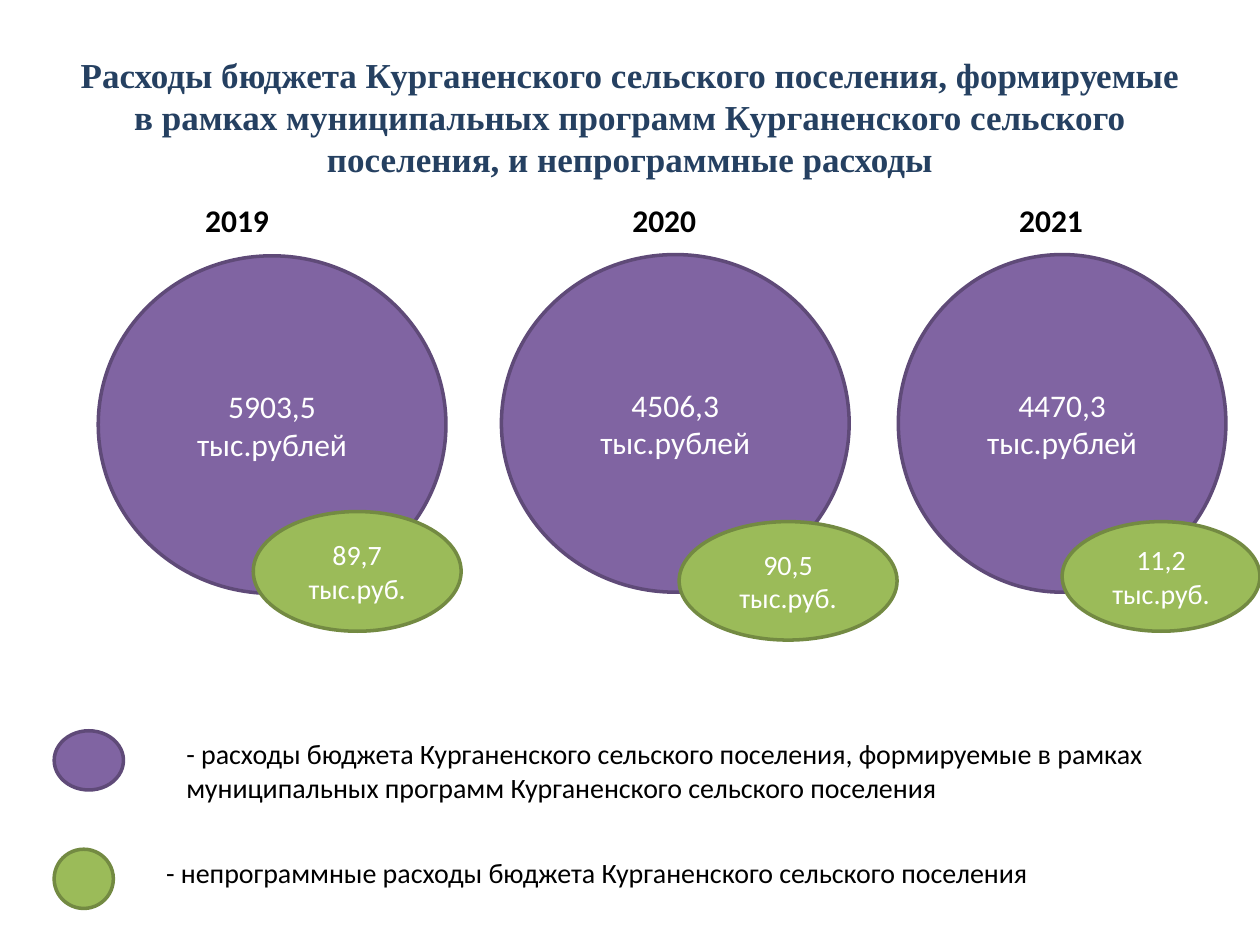
from pptx import Presentation
from pptx.dml.color import RGBColor
from pptx.enum.shapes import MSO_SHAPE
from pptx.enum.text import MSO_ANCHOR, PP_ALIGN
from pptx.util import Inches, Pt

NAVY = RGBColor(0x25, 0x40, 0x61)
PURPLE = RGBColor(0x80, 0x64, 0xA2)
PURPLE_LINE = RGBColor(0x5F, 0x4A, 0x78)
GREEN = RGBColor(0x9B, 0xBB, 0x59)
GREEN_LINE = RGBColor(0x73, 0x8A, 0x42)
WHITE = RGBColor(0xFF, 0xFF, 0xFF)
BLACK = RGBColor(0, 0, 0)

PROGRAM = (PURPLE, PURPLE_LINE)
OTHER = (GREEN, GREEN_LINE)

TITLE = ("Расходы бюджета Курганенского сельского поселения, формируемые "
         "в рамках муниципальных программ Курганенского сельского поселения, "
         "и непрограммные расходы")

# Year, label left, then position and text of the large and small ellipses
YEARS = [
    ("2019", 1.53, (0.78, 2.03, 2.76, 2.68), ["5903,5", "тыс.рублей"],
     (2.01, 4.06, 1.65, 0.95), ["89,7 тыс.руб."]),
    ("2020", 4.92, (3.98, 2.02, 2.76, 2.68), ["4506,3", "тыс.рублей"],
     (5.39, 4.14, 1.73, 0.94), ["90,5", "тыс.руб."]),
    ("2021", 7.99, (7.13, 2.02, 2.6, 2.68), ["4470,3", "тыс.рублей"],
     (8.43, 4.14, 1.57, 0.87), ["11,2 тыс.руб."]),
]

# Marker position, colours, text position, wording
LEGEND = [
    ((0.43, 5.8, 0.55, 0.47), PROGRAM, (1.38, 5.8, 7.95, 0.64),
     "- расходы бюджета Курганенского сельского поселения, формируемые в "
     "рамках муниципальных программ Курганенского сельского поселения"),
    ((0.43, 6.74, 0.47, 0.47), OTHER, (1.22, 6.74, 7.95, 0.37),
     "- непрограммные расходы бюджета Курганенского сельского поселения"),
]


def write(tf, lines, size, color, align=PP_ALIGN.LEFT, name="Calibri", bold=False):
    tf.word_wrap = True
    for i, line in enumerate(lines):
        p = tf.paragraphs[0] if i == 0 else tf.add_paragraph()
        p.alignment = align
        r = p.add_run()
        r.text = line
        for key, value in {"size": Pt(size), "name": name, "bold": bold}.items():
            setattr(r.font, key, value)
        r.font.color.rgb = color


def add_title(s):
    sp = s.shapes.title
    box = {"left": 0.5, "top": 0.3, "width": 9, "height": 1.25}
    for key, value in box.items():
        setattr(sp, key, Inches(value))
    sp.text_frame.vertical_anchor = MSO_ANCHOR.MIDDLE
    write(sp.text_frame, [TITLE], 20, NAVY, PP_ALIGN.CENTER, "Times New Roman", True)


def add_ellipse(s, box, colors, lines=(), size=16):
    sp = s.shapes.add_shape(MSO_SHAPE.OVAL, *map(Inches, box))
    sp.shadow.inherit = False
    fill, line = colors
    sp.fill.solid()
    sp.fill.fore_color.rgb = fill
    sp.line.color.rgb = line
    sp.line.width = Pt(2)
    sp.text_frame.vertical_anchor = MSO_ANCHOR.MIDDLE
    write(sp.text_frame, lines, size, WHITE, PP_ALIGN.CENTER)


def add_label(s, box, text, size, bold=False):
    sp = s.shapes.add_textbox(*map(Inches, box))
    write(sp.text_frame, [text], size, BLACK, bold=bold)


def main():
    prs = Presentation()
    prs.slide_width, prs.slide_height = Inches(10), Inches(7.5)
    s = prs.slides.add_slide(prs.slide_layouts[5])
    add_title(s)

    # Spending by year
    for year, left, big_box, big_lines, small_box, small_lines in YEARS:
        add_ellipse(s, big_box, PROGRAM, big_lines, 18)
        add_ellipse(s, small_box, OTHER, small_lines)
        add_label(s, (left, 1.55, 0.79, 0.4), year, 18, True)

    # Legend
    for marker_box, colors, text_box, text in LEGEND:
        add_ellipse(s, marker_box, colors)
        add_label(s, text_box, text, 16)

    prs.save("out.pptx")


if __name__ == "__main__":
    main()
